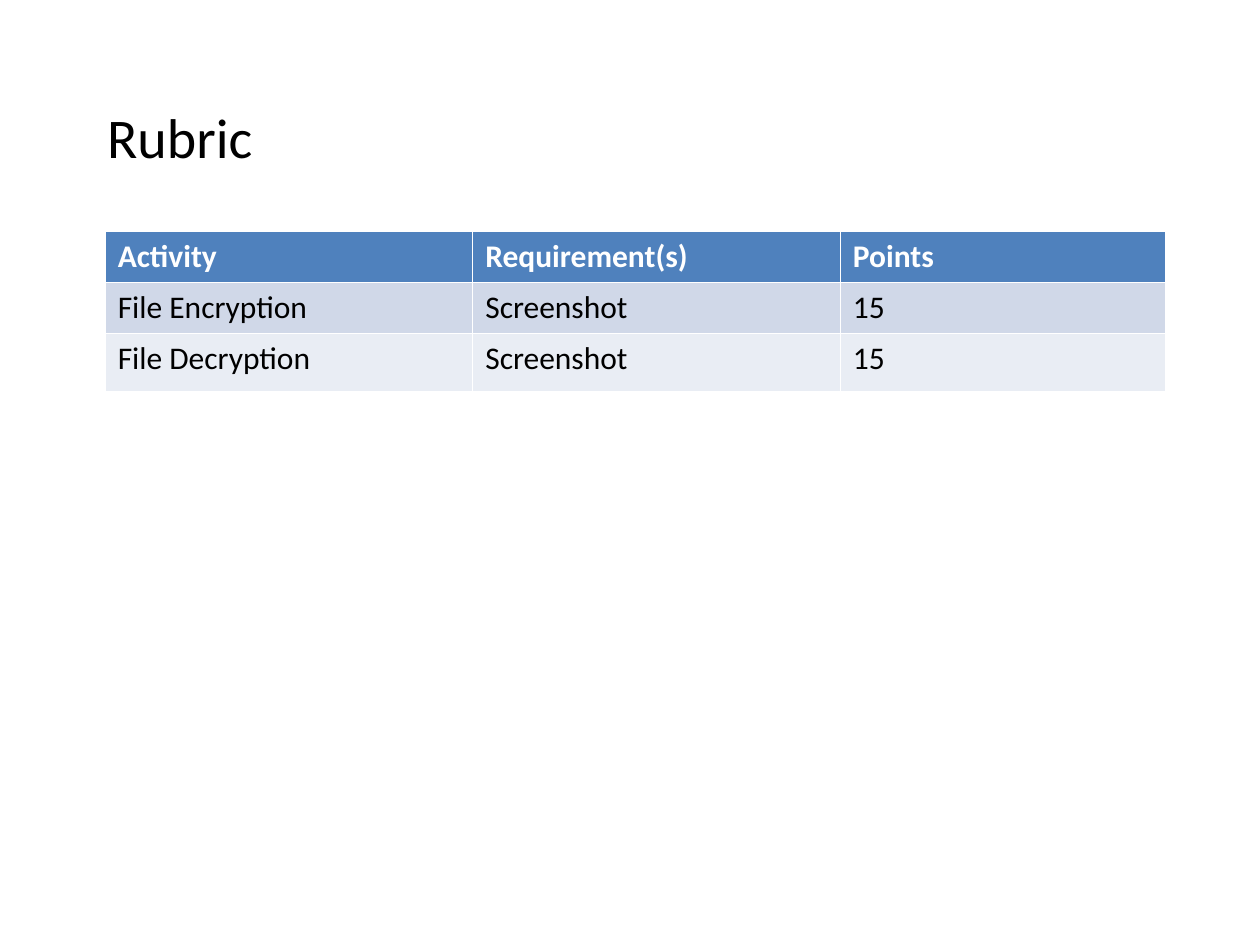
import pptx
import pptx.dml.color
import pptx.util

Cm = pptx.util.Cm
Pt = pptx.util.Pt
RGBColor = pptx.dml.color.RGBColor

BLACK = RGBColor(0x00, 0x00, 0x00)
WHITE = RGBColor(0xFF, 0xFF, 0xFF)
HEADER_BLUE = RGBColor(0x4F, 0x81, 0xBD)
BAND_COLORS = [RGBColor(0xD0, 0xD8, 0xE8), RGBColor(0xE9, 0xED, 0xF4)]
FONT_NAME = "Calibri"

RUBRIC_ROWS = [
    ["Activity", "Requirement(s)", "Points"],
    ["File Encryption", "Screenshot", "15"],
    ["File Decryption", "Screenshot", "15"],
]
COLUMN_WIDTHS = [Cm(7.41), Cm(7.41), Cm(6.56)]
ROW_HEIGHTS = [Cm(1.03), Cm(1.03), Cm(1.17)]


def format_text(text_frame, size, color, bold=False):
    for paragraph in text_frame.paragraphs:
        for run in paragraph.runs:
            run.font.name = FONT_NAME
            run.font.size = Pt(size)
            run.font.bold = bold
            run.font.color.rgb = color


presentation = pptx.Presentation()
presentation.slide_width = Cm(25.4)
presentation.slide_height = Cm(19.05)
slide = presentation.slides.add_slide(presentation.slide_layouts[6])

title = slide.shapes.add_textbox(Cm(1.91), Cm(1.95), Cm(22.86), Cm(12.57))
title.text_frame.word_wrap = True
title.text_frame.text = "Rubric"
format_text(title.text_frame, 32, BLACK)

table = slide.shapes.add_table(
    len(ROW_HEIGHTS), len(COLUMN_WIDTHS), Cm(2.12), Cm(4.66),
    sum(COLUMN_WIDTHS), sum(ROW_HEIGHTS),
).table
for column, width in zip(table.columns, COLUMN_WIDTHS):
    column.width = width
for row_index, texts in enumerate(RUBRIC_ROWS):
    is_header = row_index == 0
    fill_color = HEADER_BLUE if is_header else BAND_COLORS[row_index - 1]
    text_color = WHITE if is_header else BLACK
    table.rows[row_index].height = ROW_HEIGHTS[row_index]
    for column_index, text in enumerate(texts):
        cell = table.cell(row_index, column_index)
        cell.fill.solid()
        cell.fill.fore_color.rgb = fill_color
        cell.text_frame.text = text
        format_text(cell.text_frame, 18, text_color, is_header)

presentation.save("out.pptx")
